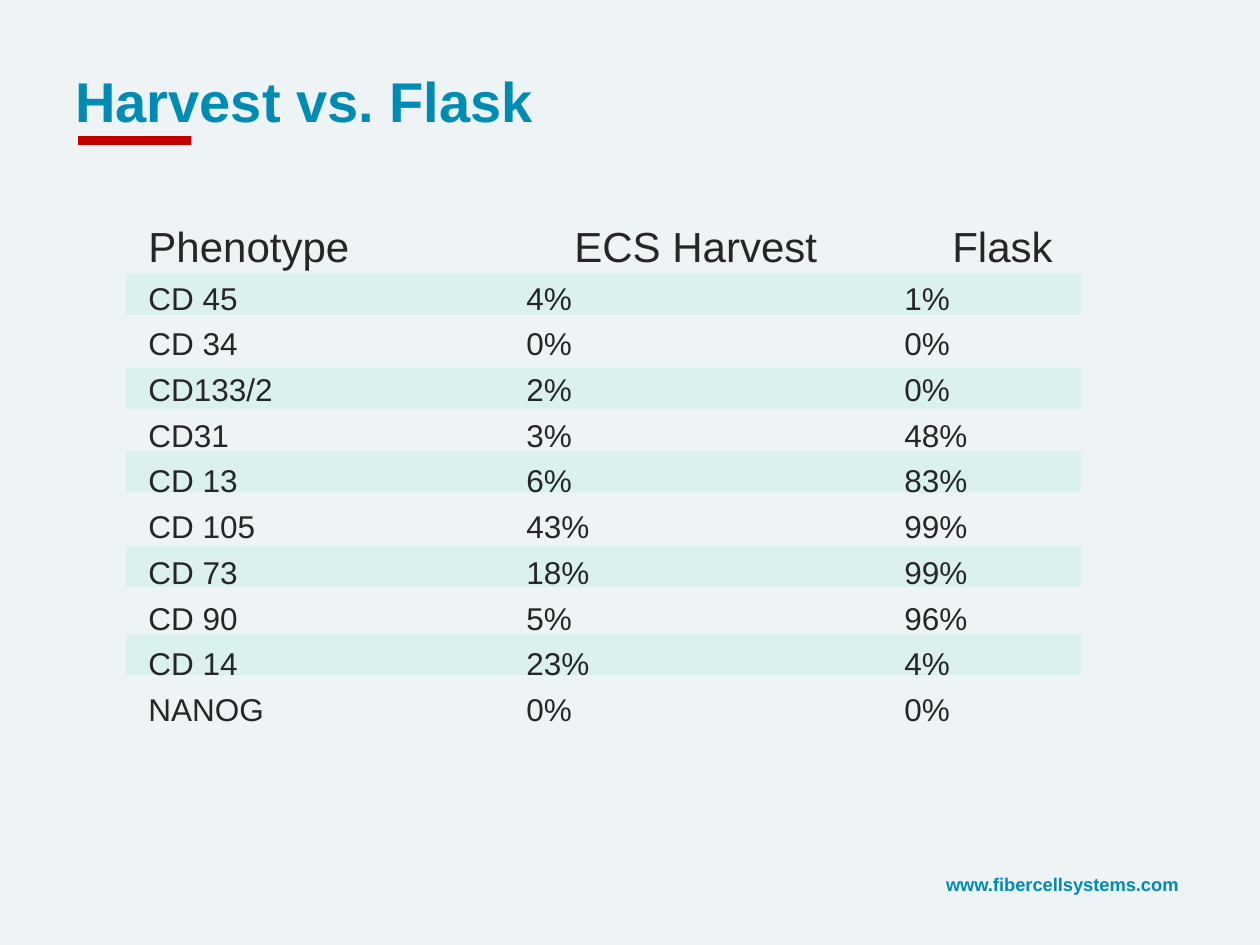
from lxml import etree
from pptx import Presentation
from pptx.dml.color import RGBColor
from pptx.enum.shapes import MSO_SHAPE
from pptx.enum.text import MSO_ANCHOR
from pptx.oxml.ns import qn
from pptx.util import Inches, Pt

RECT = MSO_SHAPE.RECTANGLE
TOP, MIDDLE = MSO_ANCHOR.TOP, MSO_ANCHOR.MIDDLE

COLORS = {
    "background": "EEF4F5",
    "accent": "008BB4",
    "underline": "C00000",
    "band": "3DDFC2",
    "text": "262626",
}
FONT = "Arial"

TITLE = "Harvest vs. Flask"
WEBSITE = "www.fibercellsystems.com"
HEADER = ("Phenotype", "ECS Harvest", "Flask")
ROWS = [
    ("CD 45", "4%", "1%"),
    ("CD 34", "0%", "0%"),
    ("CD133/2", "2%", "0%"),
    ("CD31", "3%", "48%"),
    ("CD 13", "6%", "83%"),
    ("CD 105", "43%", "99%"),
    ("CD 73", "18%", "99%"),
    ("CD 90", "5%", "96%"),
    ("CD 14", "23%", "4%"),
    ("NANOG", "0%", "0%"),
]
HEADER_TABS = (3.38, 6.38)
ROW_TABS = (3, 6)
BAND_TOPS = (2.17, 2.92, 3.58, 4.33, 5.03)
BAND_ALPHA = 11  # percent


def rgb(name):
    return RGBColor.from_string(COLORS[name])


def add_rect(slide, box, color, alpha=None):
    sp = slide.shapes.add_shape(RECT, *map(Inches, box))
    sp.shadow.inherit = False
    sp.line.fill.background()
    sp.fill.solid()
    sp.fill.fore_color.rgb = rgb(color)
    if alpha is not None:
        clr = sp.fill._xPr.find(qn("a:solidFill"))[0]
        etree.SubElement(clr, qn("a:alpha")).set("val", str(alpha * 1000))


def add_frame(slide, box, anchor=TOP, wrap=True):
    tf = slide.shapes.add_textbox(*map(Inches, box)).text_frame
    tf.word_wrap = wrap
    tf.vertical_anchor = anchor
    return tf


def write(p, text, size, color, bold=False):
    p.text = text
    p.font.name = FONT
    p.font.size = Pt(size)
    p.font.bold = bold
    p.font.color.rgb = rgb(color)


def set_tabs(p, stops):
    tabs = etree.SubElement(p._p.get_or_add_pPr(), qn("a:tabLst"))
    for stop in stops:
        etree.SubElement(tabs, qn("a:tab"), pos=str(Inches(stop)), algn="l")


prs = Presentation()
prs.slide_width, prs.slide_height = Inches(10), Inches(7.5)
slide = prs.slides.add_slide(prs.slide_layouts[6])
slide.background.fill.solid()
slide.background.fill.fore_color.rgb = rgb("background")

tf = add_frame(slide, (7.41, 6.88, 2.08, 0.28), wrap=False)
write(tf.paragraphs[0], WEBSITE, 10.5, "accent", bold=True)
add_rect(slide, (0.62, 1.08, 0.9, 0.07), "underline")
tf = add_frame(slide, (0.5, 0.17, 9, 1.25), anchor=MIDDLE)
write(tf.paragraphs[0], TITLE, 32, "accent", bold=True)

for top in BAND_TOPS:
    add_rect(slide, (1, top, 7.58, 0.33), "band", BAND_ALPHA)

tf = add_frame(slide, (1.08, 1.7, 8.25, 4.72))
p = tf.paragraphs[0]
set_tabs(p, HEADER_TABS)
write(p, "\t".join(HEADER), 24, "text")
for row in ROWS:
    p = tf.add_paragraph()
    set_tabs(p, ROW_TABS)
    write(p, "\t".join(row), 18, "text")
    p.space_before = Pt(4.5)

prs.save("out.pptx")
